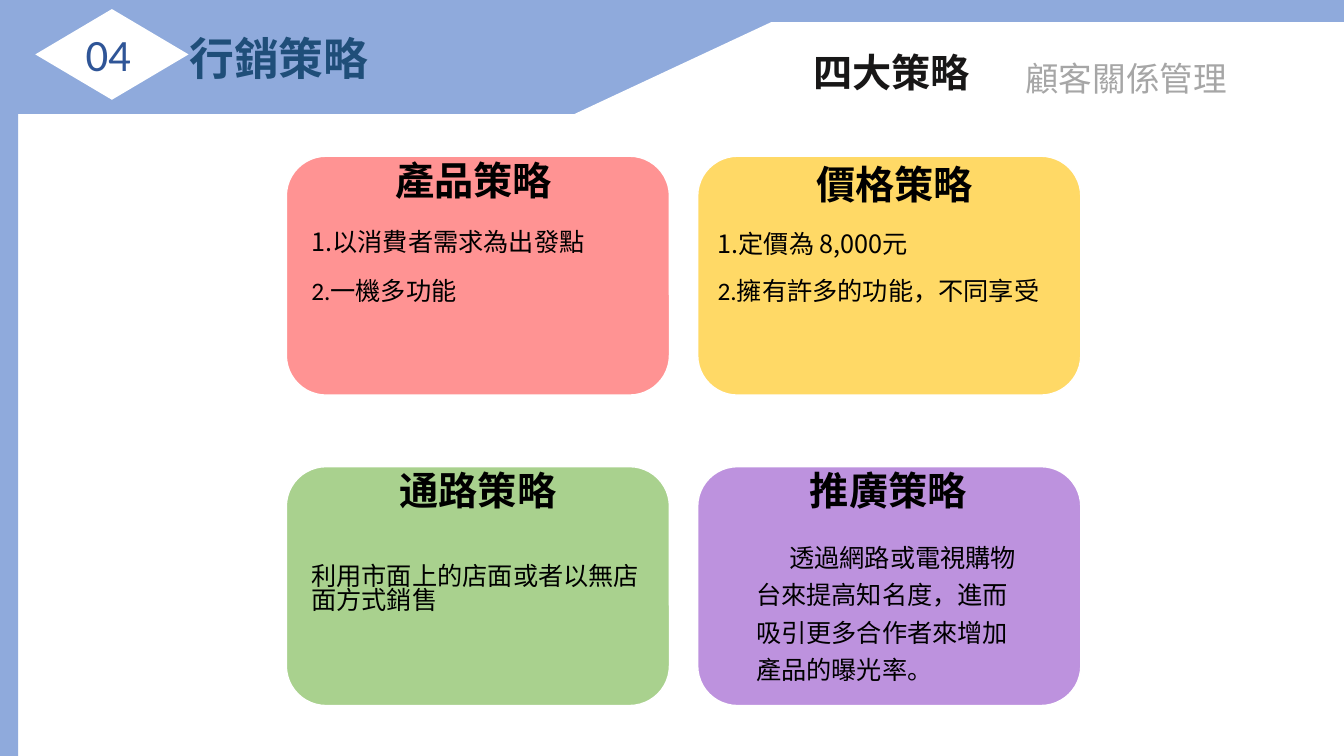
import pptx
import pptx.util
import pptx.dml.color
import pptx.enum.shapes
import pptx.enum.text

RGB = pptx.dml.color.RGBColor
SHAPE = pptx.enum.shapes.MSO_SHAPE
ALIGN = pptx.enum.text.PP_ALIGN
Pt = pptx.util.Pt
Inches = pptx.util.Inches

BLUE = RGB(0x8F, 0xAA, 0xDC)
WHITE = RGB(0xFF, 0xFF, 0xFF)
BLACK = RGB(0, 0, 0)
NUMBER_BLUE = RGB(0x2F, 0x55, 0x97)
TITLE_BLUE = RGB(0x1F, 0x4E, 0x79)
INK = RGB(0x18, 0x17, 0x17)
GREY = RGB(0xA6, 0xA6, 0xA6)
RED = RGB(0xFF, 0x93, 0x93)
YELLOW = RGB(0xFF, 0xD9, 0x66)
GREEN = RGB(0xA9, 0xD1, 0x8E)
PURPLE = RGB(0xBD, 0x92, 0xDE)

LATIN, CJK = "Calibri", "Noto Sans CJK SC"
W, H = 13.33, 7.5
GRID_X, GRID_Y = 2.84, 1.55
STEP_X, STEP_Y = 4.08, 3.08
CARD_W, CARD_H = 3.8, 2.37

HEADING = {"size": Pt(28), "bold": True}
BODY = {"size": Pt(18), "bold": False}


def add_block(s, kind, box, fill, line=None):
    """Add a plain filled shape, outlined when a line colour is given."""
    sp = s.shapes.add_shape(kind, *map(Inches, box))
    sp.shadow.inherit = False
    sp.fill.solid()
    sp.fill.fore_color.rgb = fill
    if line is None:
        sp.line.fill.background()
    else:
        sp.line.color.rgb = line
        sp.line.width = Pt(1)


def add_run(p, text, color, font=LATIN, **formats):
    """Append one formatted run to a paragraph."""
    r = p.add_run()
    r.text = text
    r.font.color.rgb = color
    for name, value in {"name": font, **formats}.items():
        setattr(r.font, name, value)


def add_box(s, box, wrap=True):
    """Add an empty text box and return its text frame."""
    tf = s.shapes.add_textbox(*map(Inches, box)).text_frame
    tf.word_wrap = wrap
    return tf


def add_label(s, box, text, color, size, bold=False, wrap=True):
    """Add a one-line text box."""
    p = add_box(s, box, wrap).paragraphs[0]
    add_run(p, text, color, size=Pt(size), bold=bold)


def add_card(s, col, row, fill, offset, width, heading, pitch, gaps, body, indent=0):
    """Add a strategy card on the grid with its heading and body text."""
    left, top = GRID_X + col * STEP_X, GRID_Y + row * STEP_Y
    add_block(s, SHAPE.ROUNDED_RECTANGLE, (left, top, CARD_W, CARD_H), fill, WHITE)
    dx, dy = offset
    tf = add_box(s, (left + dx, top + dy, width, CARD_H - dy))
    tf.margin_top = tf.margin_bottom = 0
    p = tf.paragraphs[0]
    p.alignment = ALIGN.CENTER
    add_run(p, heading, BLACK, **HEADING)
    for gap, runs in zip(gaps, body):
        p = tf.add_paragraph()
        for name, value in {"line_spacing": Pt(pitch), "space_before": Pt(gap)}.items():
            setattr(p, name, value)
        if indent:
            p._p.get_or_add_pPr().set("indent", str(Inches(indent)))
        for text, font in runs:
            add_run(p, text, BLACK, font, **BODY)


def add_header(s):
    """Add the blue frame, the section number and the header labels."""
    add_block(s, SHAPE.RECTANGLE, (0, 0, W, 1.13), BLUE)
    add_block(s, SHAPE.RECTANGLE, (0, 0, 0.18, H), BLUE)
    add_block(s, SHAPE.FLOWCHART_DECISION, (0.35, 0.09, 1.52, 0.9), WHITE)
    add_label(s, (0.75, 0.22, 1.03, 0.64), "04", NUMBER_BLUE, 32)
    add_block(s, SHAPE.FLOWCHART_DATA, (5.7, 0.22, 9.74, 0.91), WHITE)
    add_label(s, (1.78, 0.26, 2, 0.64), "行銷策略", TITLE_BLUE, 32, True, False)
    add_label(s, (10.07, 0.53, 2.22, 0.5), "顧客關係管理", GREY, 24, wrap=False)
    add_label(s, (7.97, 0.43, 1.85, 0.57), "四大策略", INK, 28, True)


def main():
    """Build the slide and save it."""
    prs = pptx.Presentation()
    prs.slide_width, prs.slide_height = Inches(W), Inches(H)
    s = prs.slides.add_slide(prs.slide_layouts[6])
    add_header(s)
    add_card(s, 0, 0, RED, (0.15, 0), 3.41, "產品策略", 17.7, (20, 17.7), [
        [("1.", CJK), ("以消費者需求為出發點", LATIN)],
        [("2.一機多功能", LATIN)]])
    add_card(s, 1, 0, YELLOW, (0.1, 0.04), 3.7, "價格策略", 16.7, (20, 16.7), [
        [("1.", CJK), ("定價為 ", LATIN), ("8,000", CJK), ("元", LATIN)],
        [("2.擁有許多的功能，不同享受", LATIN)]])
    add_card(s, 0, 1, GREEN, (0.15, 0), 3.5, "通路策略", 17.6, (37,), [
        [("利用市面上的店面或者以無店面方式銷售", LATIN)]])
    add_card(s, 1, 1, PURPLE, (0.48, 0), 2.82, "推廣策略", 26.8, (15,), [
        [("透過網路或電視購物台來提高知名度，進而吸引更多合作者來增加產品的曝光率。", LATIN)]],
        indent=0.33)
    prs.save("out.pptx")


if __name__ == "__main__":
    main()
